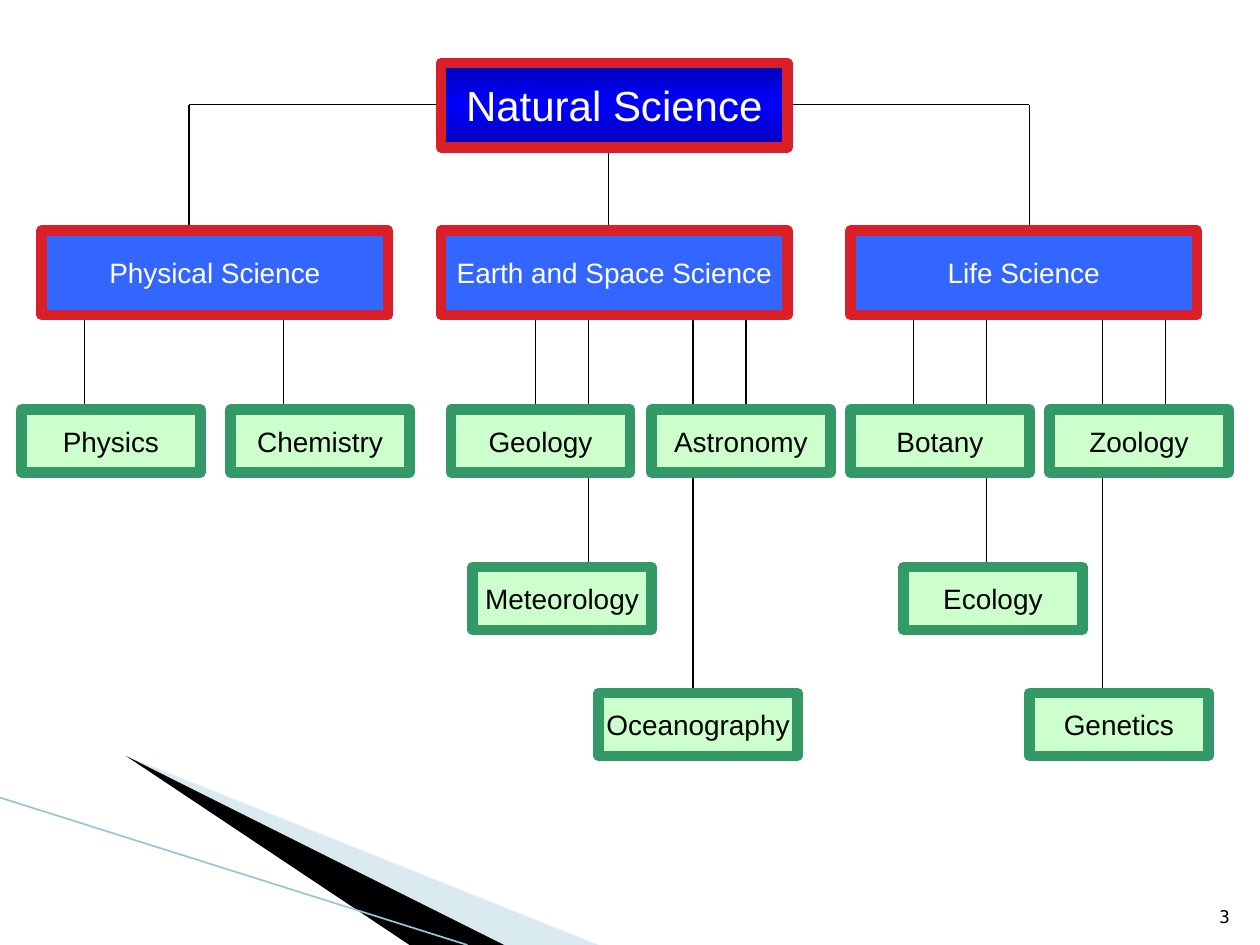
import copy

import lxml.etree
import pptx
import pptx.dml.color
import pptx.enum.shapes
import pptx.enum.text
import pptx.oxml.ns
import pptx.util

Inches = pptx.util.Inches
qn = pptx.oxml.ns.qn

BRANCH_WIDTH, BRANCH_HEIGHT = 2.75, 0.67
FIELD_WIDTH, FIELD_HEIGHT = 1.42, 0.5
BRANCH_TOP = 1.83
BRANCH_BOTTOM = BRANCH_TOP + BRANCH_HEIGHT
ROOT_LEFT, ROOT_TOP = 3.5, 0.5
ROOT_MIDDLE = 0.83
FIELD_ROWS = [3.25, 4.5, 5.5]

BRANCHES = [
    ("Physical Science", 0.33, 1.5),
    ("Earth and Space Science", ROOT_LEFT, 4.83),
    ("Life Science", 6.75, 8.17),
]
FIELDS = [
    ("Physics", 0.17, 0, 0.67),
    ("Chemistry", 1.83, 0, 2.25),
    ("Geology", 3.58, 0, 4.25),
    ("Astronomy", 5.17, 0, 5.92),
    ("Botany", 6.75, 0, 7.25),
    ("Zoology", 8.33, 0, 9.25),
    ("Meteorology", 3.75, 1, 4.67),
    ("Oceanography", 4.75, 2, 5.5),
    ("Ecology", 7.17, 1, 7.83),
    ("Genetics", 8.17, 2, 8.75),
]


def color(value):
    return pptx.dml.color.RGBColor.from_string(value)


def add_line(slide, start, end, line_color="000000", width=0.75):
    connector = slide.shapes.add_connector(
        pptx.enum.shapes.MSO_CONNECTOR.STRAIGHT,
        *(Inches(value) for value in start + end),
    )
    connector.line.color.rgb = color(line_color)
    connector.line.width = pptx.util.Pt(width)
    lxml.etree.SubElement(connector._element.spPr, qn("a:effectLst"))


def add_wedge(slide, points, fill_color, opacity=100):
    builder = slide.shapes.build_freeform(*points[0], scale=Inches(1))
    builder.add_line_segments(points[1:], close=True)
    shape = builder.convert_to_shape()
    shape.shadow.inherit = False
    shape.line.fill.background()
    shape.fill.solid()
    shape.fill.fore_color.rgb = color(fill_color)
    if opacity < 100:
        fill = shape._element.spPr.find(qn("a:solidFill"))
        alpha = lxml.etree.SubElement(fill[0], qn("a:alpha"))
        alpha.set("val", str(opacity * 1000))


def add_box(slide, text, left, top, width, height, fill_color, line_color,
            text_color, size=16):
    shape = slide.shapes.add_shape(
        pptx.enum.shapes.MSO_SHAPE.RECTANGLE,
        Inches(left), Inches(top), Inches(width), Inches(height),
    )
    shape.shadow.inherit = False
    shape.fill.solid()
    shape.fill.fore_color.rgb = color(fill_color)
    shape.line.color.rgb = color(line_color)
    shape.line.width = pptx.util.Pt(6)
    frame = shape.text_frame
    frame.word_wrap = False
    frame.vertical_anchor = pptx.enum.text.MSO_ANCHOR.MIDDLE
    write(frame, text, pptx.enum.text.PP_ALIGN.CENTER, "Arial", size, text_color)
    return shape


def write(frame, text, alignment, font_name, size, text_color):
    paragraph = frame.paragraphs[0]
    paragraph.text = text
    paragraph.alignment = alignment
    paragraph.font.name = font_name
    paragraph.font.size = pptx.util.Pt(size)
    paragraph.font.color.rgb = color(text_color)


def apply_gradient(shape, stop_colors):
    shape.fill.gradient()
    shape.fill.gradient_angle = 90
    stop_list = shape._element.spPr.find(qn("a:gradFill")).find(qn("a:gsLst"))
    stop_list.insert(1, copy.deepcopy(stop_list[0]))
    last = len(stop_colors) - 1
    for index, stop in enumerate(shape.fill.gradient_stops):
        stop.position = index / last
        stop.color.rgb = color(stop_colors[index])


def add_slide_number(slide, text):
    box = slide.shapes.add_textbox(
        Inches(9.46), Inches(7.01), Inches(0.4), Inches(0.4))
    box.text_frame.word_wrap = True
    box.text_frame.vertical_anchor = pptx.enum.text.MSO_ANCHOR.BOTTOM
    write(box.text_frame, text, pptx.enum.text.PP_ALIGN.RIGHT,
          "DejaVu Sans Mono", 10, "000000")


def add_decoration(slide):
    add_wedge(slide, [(0.55, 6.5), (5.95, 7.5), (4.56, 7.5)], "A0CBDC", 40)
    add_wedge(slide, [(0.53, 6.49), (4.57, 7.5), (3.72, 7.5)], "000000")
    add_line(slide, (0, 6.33), (3.71, 7.5), "97C5D8", 0.95)


def add_hierarchy(slide):
    add_line(slide, (BRANCHES[0][2], ROOT_MIDDLE), (BRANCHES[-1][2], ROOT_MIDDLE))
    for name, left, line_x in BRANCHES:
        add_line(slide, (line_x, ROOT_MIDDLE), (line_x, BRANCH_TOP))
    for name, left, row, line_x in FIELDS:
        add_line(slide, (line_x, BRANCH_BOTTOM), (line_x, FIELD_ROWS[row]))

    root = add_box(slide, "Natural Science", ROOT_LEFT, ROOT_TOP, BRANCH_WIDTH,
                   BRANCH_HEIGHT, "0000FF", "DA1F28", "FFFFFF", 24)
    apply_gradient(root, ["0000B6", "0000FF", "0000B6"])
    for name, left, line_x in BRANCHES:
        add_box(slide, name, left, BRANCH_TOP, BRANCH_WIDTH, BRANCH_HEIGHT,
                "3366FF", "DA1F28", "FFFFFF")
    for name, left, row, line_x in FIELDS:
        width = 1.58 if name == "Oceanography" else FIELD_WIDTH
        add_box(slide, name, left, FIELD_ROWS[row], width, FIELD_HEIGHT,
                "CCFFCC", "339966", "000000")


def main():
    presentation = pptx.Presentation()
    presentation.slide_width = Inches(10)
    presentation.slide_height = Inches(7.5)
    slide = presentation.slides.add_slide(presentation.slide_layouts[6])
    add_decoration(slide)
    add_hierarchy(slide)
    add_slide_number(slide, "3")
    presentation.save("out.pptx")


if __name__ == "__main__":
    main()
